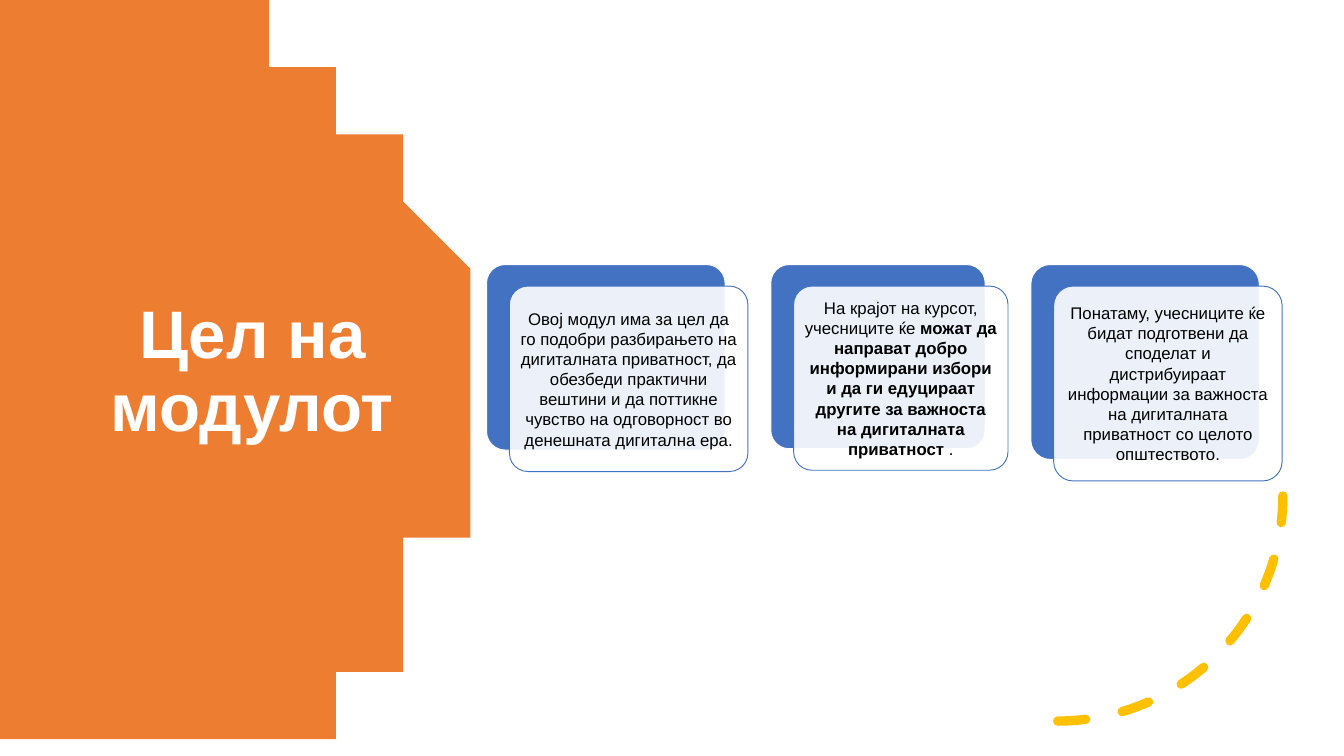
import math
import pptx
import pptx.util
import pptx.dml.color
import pptx.enum.shapes
import pptx.enum.text
import lxml.etree

WIDE, HIGH = 20, 11.25
SHAPE = pptx.enum.shapes.MSO_SHAPE
BLUE, WHITE = "4372C3", "FFFFFF"
CARDS = [
    (7.24, 3.55, 2.76, [
        ("Овој модул има за цел да го подобри разбирањето на дигиталната "
         "приватност, да обезбеди практични вештини и да поттикне чувство "
         "на одговорност во денешната дигитална ера.", False)]),
    (11.47, 3.19, 2.74, [
        ("На крајот на курсот, учесниците ќе ", False),
        ("можат да направат добро информирани избори и да ги едуцираат "
         "другите за важноста на дигиталната приватност ", True),
        (".", False)]),
    (15.34, 3.4, 2.9, [
        ("Понатаму, учесниците ќе бидат подготвени да споделат и "
         "дистрибуираат информации за важноста на дигиталната приватност "
         "со целото општеството.", False)]),
]


def inch(*sizes):
    """Turn inches into lengths."""
    return [pptx.util.Inches(size) for size in sizes]


def tint(item, code):
    """Give a fill, line or font a solid colour from a hex string."""
    if hasattr(item, "solid"):
        item.solid()
        item = item.fore_color
    else:
        item = item.color
    item.rgb = pptx.dml.color.RGBColor.from_string(code)


def write(frame, runs, size, code, inset):
    """Write one centred paragraph of (text, bold) runs."""
    frame.word_wrap = True
    frame.vertical_anchor = pptx.enum.text.MSO_ANCHOR.MIDDLE
    frame.margin_left = frame.margin_right = pptx.util.Inches(inset[0])
    frame.margin_top = frame.margin_bottom = pptx.util.Inches(inset[1])
    para = frame.paragraphs[0]
    para.alignment = pptx.enum.text.PP_ALIGN.CENTER
    para.font.name, para.font.size = "Arial", pptx.util.Pt(size)
    tint(para.font, code)
    for text, bold in runs:
        run = para.add_run()
        run.text, run.font.bold = text, bold
    return para


def box(slide, place, fill, line):
    """Add a rounded box with a thin outline."""
    shape = slide.shapes.add_shape(SHAPE.ROUNDED_RECTANGLE, *inch(*place))
    shape.shadow.inherit = False
    shape.adjustments[0] = 0.1
    tint(shape.fill, fill)
    tint(shape.line, line)
    shape.line.width = pptx.util.Pt(1)
    return shape


def card(slide, left, wide, high, runs):
    """Add a blue box and a sheer white one with text, set off from it."""
    top, step = 0.35 * HIGH, (0.34, 0.32)
    box(slide, (left, top, wide, high), BLUE, WHITE)
    front = box(slide, (left + step[0], top + step[1], wide, high), WHITE, BLUE)
    hue = front.fill._xPr.find(".//" + pptx.oxml.ns.qn("a:srgbClr"))
    lxml.etree.SubElement(hue, pptx.oxml.ns.qn("a:alpha"), val="90000")
    write(front.text_frame, runs, 18, "000000", (0.08, 0.08))


def disc(slide, mid, ray, code):
    """Add a circle cut off by the left, top and bottom slide edges."""
    half = HIGH / 2
    turn = math.asin(half / ray)
    arc = [(mid + ray * math.cos(turn * k / 60), half + ray * math.sin(turn * k / 60))
           for k in range(-60, 61)]
    pen = slide.shapes.build_freeform(0, 0, scale=pptx.util.Inches(1))
    pen.add_line_segments(arc + [(0, HIGH)], close=True)
    shape = pen.convert_to_shape()
    shape.shadow.inherit = False
    tint(shape.fill, code)
    shape.line.fill.background()


def sweep(slide, left, top, side, code):
    """Add a dashed quarter arc that opens to the lower right."""
    shape = slide.shapes.add_shape(SHAPE.ARC, *inch(left, top, side, side))
    shape.shadow.inherit = False
    shape.rotation = 180
    shape._element.spPr.xfrm.set("flipH", "1")
    shape.fill.background()
    tint(shape.line, code)
    shape.line.width = pptx.util.Pt(10)
    shape.line.dash_style = pptx.enum.dml.MSO_LINE.DASH
    shape.line._get_or_add_ln().set("cap", "rnd")


def title(slide, text):
    """Add the bold white heading."""
    frame = slide.shapes.add_textbox(*inch(1.13, 1.89, 5.25, 7.32)).text_frame
    para = write(frame, [(text, True)], 72, WHITE, (0.1, 0.05))
    para.line_spacing = 0.9


def main():
    """Build the slide and save it."""
    deck = pptx.Presentation()
    deck.slide_width, deck.slide_height = inch(WIDE, HIGH)
    slide = deck.slides.add_slide(deck.slide_layouts[6])
    disc(slide, 0.22, 6.62, "ED7D31")
    title(slide, "Цел на модулот")
    sweep(slide, 12.39, 4.03, 6.7, "FFC000")
    for left, wide, high, runs in CARDS:
        card(slide, left, wide, high, runs)
    deck.save("out.pptx")


if __name__ == "__main__":
    main()
